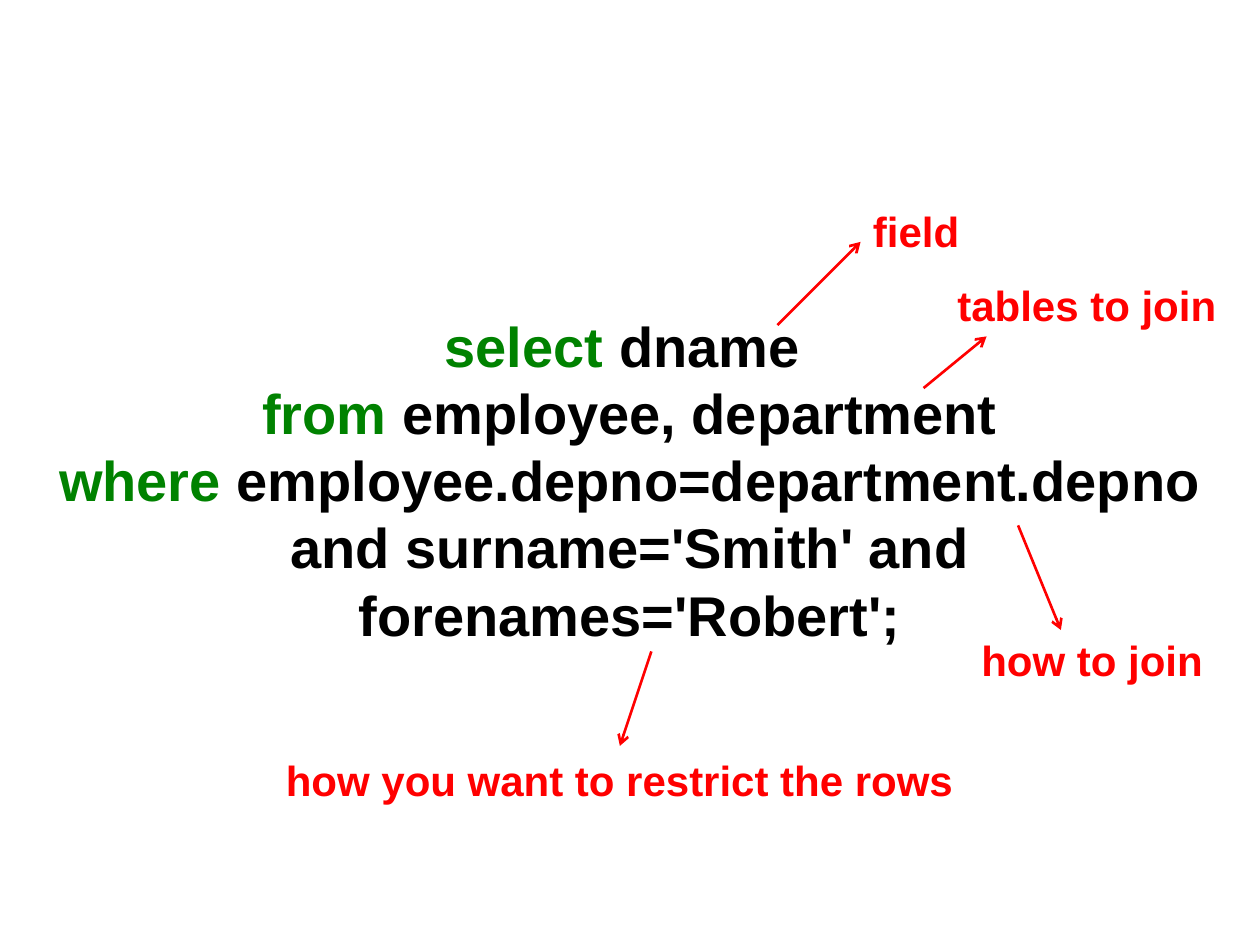
"""Build a slide that explains the parts of an SQL join query."""
from typing import NamedTuple

from lxml import etree
from pptx import Presentation
from pptx import util as u
from pptx.dml.color import RGBColor
from pptx.enum import shapes, text
from pptx.oxml import ns

BLACK = RGBColor(0x00, 0x00, 0x00)
GREEN = RGBColor(0x00, 0x82, 0x00)
RED = RGBColor(0xFF, 0x00, 0x00)
FONT = "Arial"


class Run(NamedTuple):
    text: str
    color: RGBColor


class Note(NamedTuple):
    text: str
    box: tuple[float, float, float, float]
    start: tuple[float, float]
    end: tuple[float, float]


QUERY = [
    [Run("select ", GREEN), Run("dname ", BLACK)],
    [
        Run("from", GREEN),
        Run(" employee, department\n", BLACK),
        Run("where ", GREEN),
        Run("employee.depno=department.depno and surname='Smith' "
            "and forenames='Robert';", BLACK),
    ],
]

NOTES = [
    Note("field", (6.83, 1.58, 0.89, 0.51), (6.17, 2.58), (6.83, 1.92)),
    Note("tables to join", (7.5, 2.17, 2.27, 0.51), (7.33, 3.08), (7.83, 2.67)),
    Note("how to join", (7.69, 4.99, 1.97, 0.51), (8.08, 4.17), (8.42, 5)),
    Note("how you want to restrict the rows", (2.17, 5.94, 5.55, 0.5),
         (5.17, 5.17), (4.92, 5.92)),
]


def add_text(slide, paras: list[list[Run]], box: tuple, *, size: int,
             align=text.PP_ALIGN.LEFT, wrap: bool = False) -> None:
    """Add a bold text box made of coloured runs."""
    frame = slide.shapes.add_textbox(*map(u.Inches, box)).text_frame
    frame.word_wrap = wrap
    frame.auto_size = text.MSO_AUTO_SIZE.SHAPE_TO_FIT_TEXT
    for i, runs in enumerate(paras):
        para = frame.add_paragraph() if i else frame.paragraphs[0]
        para.alignment = align
        for part in runs:
            run = para.add_run()
            run.text = part.text.rstrip("\n")
            run.font.name = FONT
            run.font.size = u.Pt(size)
            run.font.bold = True
            run.font.color.rgb = part.color
            if part.text.endswith("\n"):
                para.add_line_break()


def add_arrow(slide, start: tuple, end: tuple) -> None:
    """Add a red line with an open arrowhead at its end."""
    arrow = slide.shapes.add_connector(
        shapes.MSO_CONNECTOR.STRAIGHT, *map(u.Inches, start + end))
    arrow.line.color.rgb = RED
    arrow.line.width = u.Pt(1.5)
    etree.SubElement(arrow.line._get_or_add_ln(), ns.qn("a:tailEnd"), type="arrow")
    etree.SubElement(arrow._element.spPr, ns.qn("a:effectLst"))


def main() -> None:
    """Draw the query and its notes, then save the deck."""
    deck = Presentation()
    deck.slide_width, deck.slide_height = u.Inches(10), u.Inches(7.5)
    slide = deck.slides.add_slide(deck.slide_layouts[6])
    add_text(slide, QUERY, (0.33, 2.42, 9.34, 2.79), size=32,
             align=text.PP_ALIGN.CENTER, wrap=True)
    for note in NOTES:
        add_text(slide, [[Run(note.text, RED)]], note.box, size=24)
        add_arrow(slide, note.start, note.end)
    deck.save("out.pptx")


if __name__ == "__main__":
    main()
